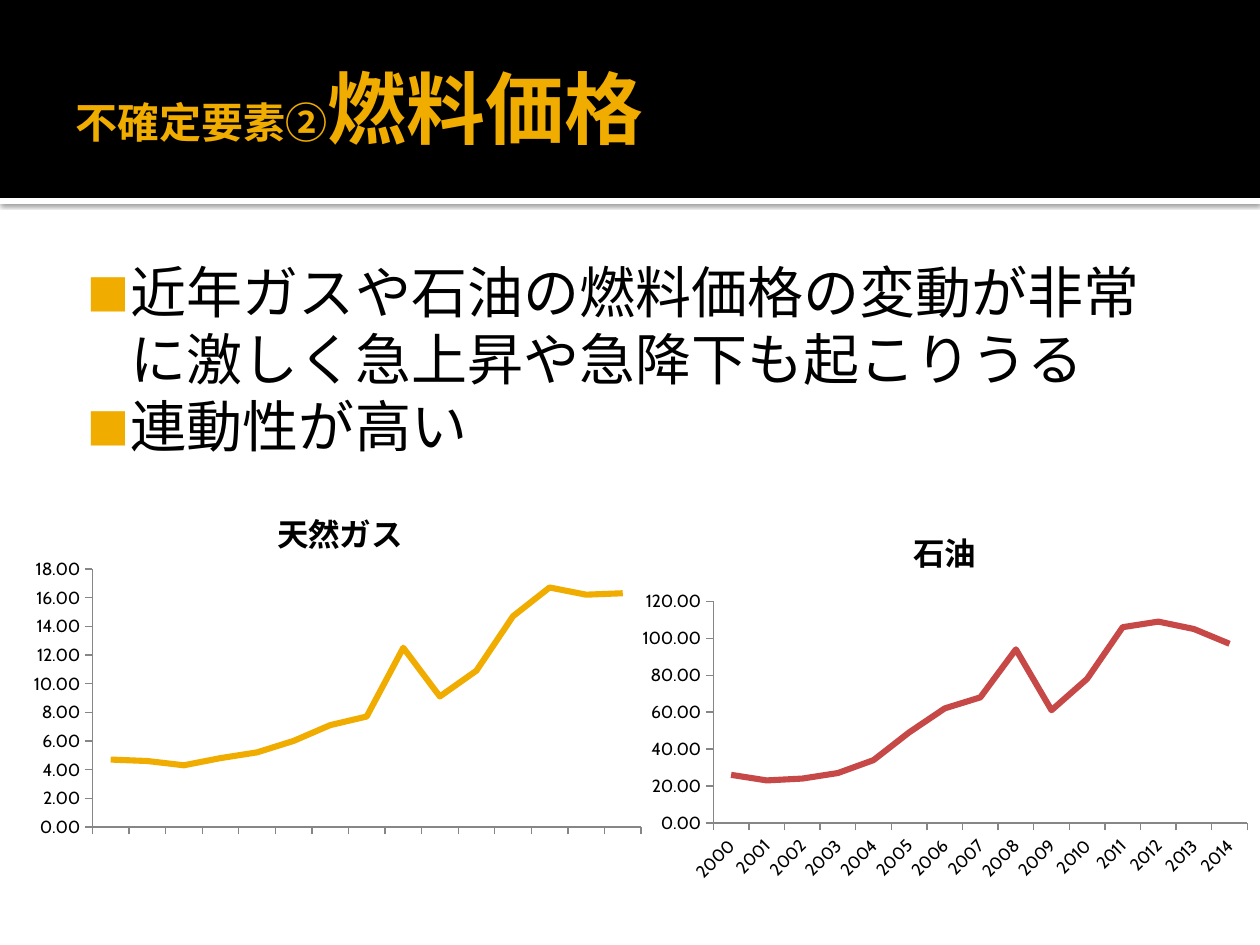
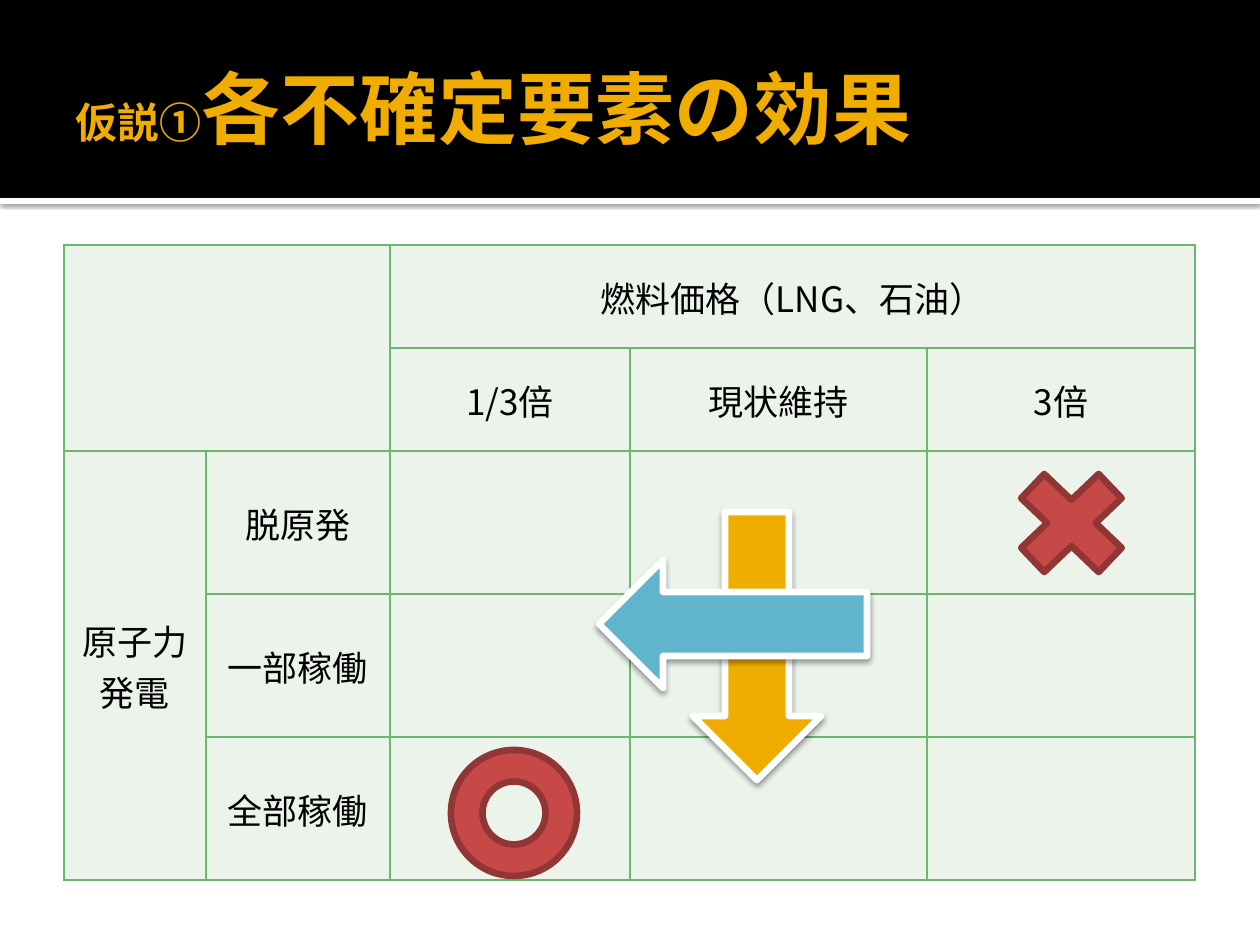
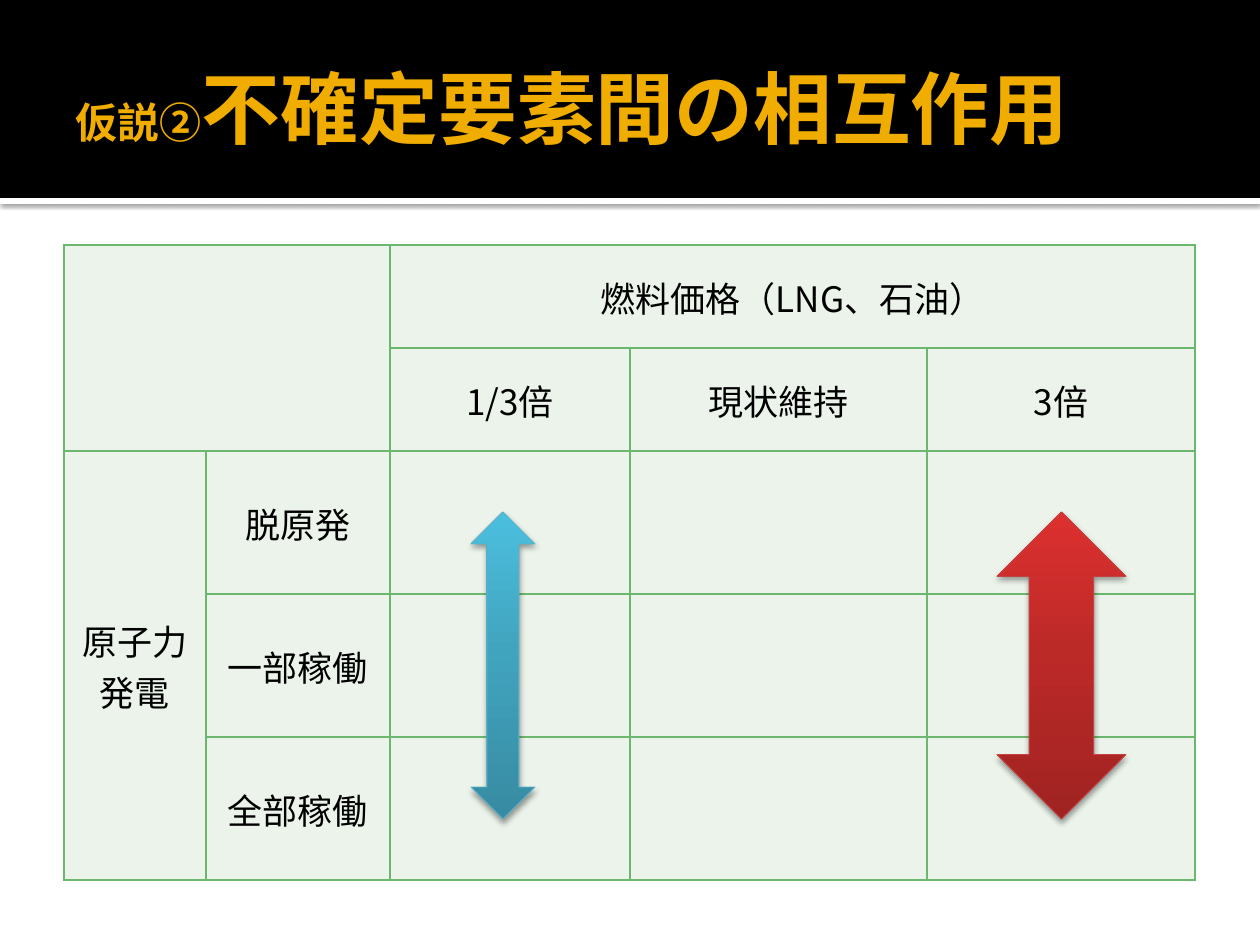
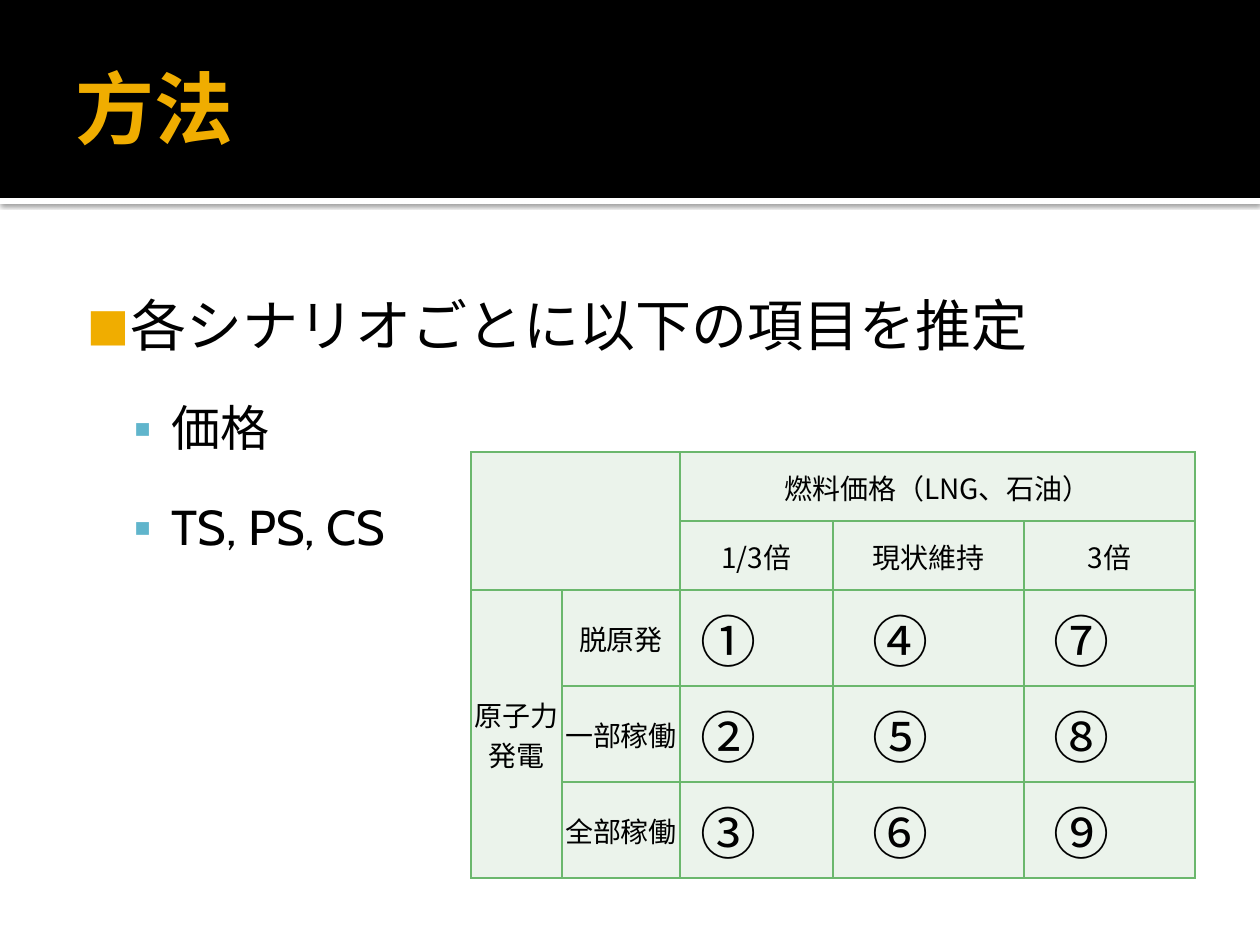
import pptx
import pptx.chart.data
import pptx.dml.color
import pptx.enum.chart
import pptx.enum.shapes
import pptx.enum.text
import pptx.oxml
import pptx.oxml.ns
import pptx.util

MSO = pptx.enum.shapes.MSO_SHAPE
TICK = pptx.enum.chart.XL_TICK_LABEL_POSITION
qn = pptx.oxml.ns.qn
Pt = pptx.util.Pt

SCALE = 914400 / 126
WIDTH, HEIGHT = 1260, 945
FONT, TABLE_FONT = "Cabin", "Noto Sans CJK JP"
COLORS = {
    "white": "FFFFFF", "black": "000000", "gold": "F0AD00", "blue": "60B5CC",
    "red": "C64847", "dark_red": "923535", "green": "6BB76D",
    "pale_green": "EBF3EB", "axis": "868686", "blue_edge": "5BB3CA",
    "red_edge": "C54342",
}
BLUE_GRADIENT = ((0, "378BA2"), (55, "41A4BF"), (100, "4BBFDE"))
RED_GRADIENT = ((0, "A02322"), (55, "BC2A28"), (100, "DC302F"))

TITLE_BOX = (63, 21, 1134, 173)
BODY_BOX = (63, 244, 1134, 638)
BAND = (0, 0, WIDTH, 198)
STRIP = (0, 198, WIDTH, 6)
STRIP_SHADOW = (60, 2.5, 0.8)
ARROW_SHADOW = (38, 3.5, 2)

BULLETS = [
    {"char": "■", "color": "gold", "percent": 80, "left": 60, "hang": 44, "size": 32, "before": 0},
    {"char": "▪", "color": "blue", "percent": 90, "left": 101, "hang": 38, "size": 28, "before": 6},
]

YEARS = [str(year) for year in range(2000, 2015)]
CHARTS = [
    {"name": "天然ガス", "box": (25, 493, 630, 378), "color": "gold",
     "plot": (0.107, 0.201, 0.871, 0.683), "years_shown": False,
     "values": (4.7, 4.6, 4.3, 4.8, 5.2, 6, 7.1, 7.7, 12.5, 9.1, 10.9, 14.7, 16.7, 16.2, 16.3)},
    {"name": "石油", "box": (630, 512, 630, 378), "color": "red",
     "plot": None, "years_shown": True,
     "values": (26, 23, 24, 27, 34, 49, 62, 68, 94, 61, 78, 106, 109, 105, 97)},
]

PRICE_HEAD = "燃料価格（LNG、石油）"
PRICES = ["1/3倍", "現状維持", "3倍"]
NUCLEAR_HEAD = "原子力発電"
NUCLEAR = ["脱原発", "一部稼働", "全部稼働"]
NO_SCENARIOS = [[""] * 3] * 3
SCENARIOS = [["①　", "④　", "⑦　"], ["②　", "⑤　", "⑧　"], ["③　", "⑥　", "⑨　"]]
LARGE_GRID = {"at": (64, 245), "cols": (142, 184, 240, 297, 268),
              "rows": (103, 103, 143, 143, 143), "size": 20}
SMALL_GRID = {"at": (471, 452), "cols": (91, 118, 153, 191, 171),
              "rows": (69, 69, 96, 96, 96), "size": 16}

EFFECT_MARKS = [
    {"kind": MSO.DOWN_ARROW, "box": (693, 512, 128, 268), "fill": "gold",
     "line": ("white", 3.8), "shadow": ARROW_SHADOW},
    {"kind": MSO.DOWN_ARROW, "box": (669, 490, 128, 268), "fill": "blue",
     "line": ("white", 3.8), "shadow": ARROW_SHADOW, "turn": 90},
    {"kind": MSO.DONUT, "box": (451, 750, 126, 126), "fill": "red", "line": ("dark_red", 3.8)},
    {"kind": MSO.MATH_MULTIPLY, "box": (997, 452, 149, 142), "fill": "red", "line": ("dark_red", 3.8)},
]
INTERACTION_MARKS = [
    {"kind": MSO.UP_DOWN_ARROW, "box": (471, 512, 64, 307), "fill": BLUE_GRADIENT,
     "line": ("blue_edge", 0.5), "shadow": ARROW_SHADOW},
    {"kind": MSO.UP_DOWN_ARROW, "box": (997, 512, 129, 307), "fill": RED_GRADIENT,
     "line": ("red_edge", 0.5), "shadow": ARROW_SHADOW},
]

SLIDES = [
    {"lead": "不確定要素②", "title": "燃料価格", "charts": CHARTS, "spacing": None,
     "body": [(0, "近年ガスや石油の燃料価格の変動が非常に激しく急上昇や急降下も起こりうる"),
              (0, "連動性が高い")]},
    {"lead": "仮説①", "title": "各不確定要素の効果", "grid": LARGE_GRID,
     "scenarios": NO_SCENARIOS, "marks": EFFECT_MARKS},
    {"lead": "仮説②", "title": "不確定要素間の相互作用", "grid": LARGE_GRID,
     "scenarios": NO_SCENARIOS, "marks": INTERACTION_MARKS},
    {"lead": "", "title": "方法", "grid": SMALL_GRID, "scenarios": SCENARIOS, "spacing": 1.5,
     "body": [(0, "各シナリオごとに以下の項目を推定"), (1, "価格"), (1, "TS, PS, CS")]},
]


def emu(px):
    return round(px * SCALE)


def place(box):
    return [emu(v) for v in box]


def rgb(name):
    return pptx.dml.color.RGBColor.from_string(COLORS[name])


def xml_in(parent, tag, **attrs):
    child = parent.makeelement(qn(tag), {k: str(v) for k, v in attrs.items()})
    parent.append(child)
    return child


def style(r, size, color="black", font=FONT, bold=False):
    r.font.size = Pt(size)
    r.font.bold = bold
    r.font.name = font
    r.font.color.rgb = rgb(color)
    xml_in(r.font._element, "a:ea", typeface=font)


def set_margins(holder, left, top, right, bottom):
    holder.margin_left, holder.margin_top = emu(left), emu(top)
    holder.margin_right, holder.margin_bottom = emu(right), emu(bottom)


def fill_gradient(sp, stops):
    sp.fill.gradient()
    sp.fill.gradient_angle = 90
    stop_list = next(sp._element.spPr.iter(qn("a:gsLst")))
    for old in list(stop_list):
        stop_list.remove(old)
    for position, color in stops:
        xml_in(xml_in(stop_list, "a:gs", pos=position * 1000), "a:srgbClr", val=color)


def add_shape(s, kind, box, fill, line=None, shadow=None, turn=0):
    sp = s.shapes.add_shape(kind, *place(box))
    sp.rotation = turn
    if isinstance(fill, str):
        sp.fill.solid()
        sp.fill.fore_color.rgb = rgb(fill)
    else:
        fill_gradient(sp, fill)
    if line:
        sp.line.color.rgb = rgb(line[0])
        sp.line.width = Pt(line[1])
    else:
        sp.line.fill.background()
    sp.shadow.inherit = False
    if shadow:
        alpha, blur, distance = shadow
        effects = sp._element.spPr.find(qn("a:effectLst"))
        outer = xml_in(effects, "a:outerShdw", blurRad=int(Pt(blur)), dist=int(Pt(distance)),
                       dir=5400000, algn="ctr", rotWithShape=0)
        xml_in(xml_in(outer, "a:srgbClr", val=COLORS["black"]), "a:alpha", val=alpha * 1000)


def add_text_frame(s, box, margins):
    tf = s.shapes.add_textbox(*place(box)).text_frame
    tf.word_wrap = True
    set_margins(tf, *margins)
    return tf


def add_header(s, lead, title):
    add_shape(s, MSO.RECTANGLE, STRIP, "white", shadow=STRIP_SHADOW)
    add_shape(s, MSO.RECTANGLE, BAND, "black")
    tf = add_text_frame(s, TITLE_BOX, (13, 6, 6, 6))
    tf.vertical_anchor = pptx.enum.text.MSO_ANCHOR.MIDDLE
    for text, size in ((lead, 24), (title, 45)):
        if text:
            r = tf.paragraphs[0].add_run()
            r.text = text
            style(r, size, "gold", bold=True)


def add_body(s, items, spacing):
    tf = add_text_frame(s, BODY_BOX, (8, 13, 13, 6))
    tf.text = "\n".join(text for level, text in items)
    for p, (level, text) in zip(tf.paragraphs, items):
        bullet = BULLETS[level]
        p.level = level
        p.space_before = Pt(bullet["before"])
        if spacing:
            p.line_spacing = spacing
        style(p.runs[0], bullet["size"])
        pPr = p._p.get_or_add_pPr()
        pPr.set("marL", str(emu(bullet["left"])))
        pPr.set("indent", str(-emu(bullet["hang"])))
        xml_in(xml_in(pPr, "a:buClr"), "a:srgbClr", val=COLORS[bullet["color"]])
        xml_in(pPr, "a:buSzPct", val=bullet["percent"] * 1000)
        xml_in(pPr, "a:buFont", typeface=FONT)
        xml_in(pPr, "a:buChar", char=bullet["char"])


def set_plot_area(chart, bounds):
    plot_area = chart.plots[0]._element.getparent()
    for old in plot_area.findall(qn("c:layout")):
        plot_area.remove(old)
    layout = plot_area.makeelement(qn("c:layout"), {})
    plot_area.insert(0, layout)
    manual = xml_in(layout, "c:manualLayout")
    xml_in(manual, "c:layoutTarget", val="inner")
    for tag in ("c:xMode", "c:yMode"):
        xml_in(manual, tag, val="edge")
    for tag, value in zip(("c:x", "c:y", "c:w", "c:h"), bounds):
        xml_in(manual, tag, val=value)


def add_line_chart(s, name, box, color, plot, years_shown, values):
    data = pptx.chart.data.CategoryChartData(number_format="0.00")
    data.categories = YEARS
    data.add_series(name, values)
    kind = pptx.enum.chart.XL_CHART_TYPE.LINE
    chart = s.shapes.add_chart(kind, *place(box), data).chart
    chart.font.size = Pt(10)
    chart.font.name = FONT
    chart.font.color.rgb = rgb("black")
    chart.has_legend = False
    chart.has_title = True
    tf = chart.chart_title.text_frame
    tf.text = name
    style(tf.paragraphs[0].runs[0], 18, bold=True)
    chart.plots[0].vary_by_categories = False
    series = chart.plots[0].series[0]
    series.smooth = False
    series.format.line.color.rgb = rgb(color)
    series.format.line.width = Pt(3.5)
    for axis in (chart.category_axis, chart.value_axis):
        axis.has_major_gridlines = False
        axis.major_tick_mark = pptx.enum.chart.XL_TICK_MARK.OUTSIDE
        axis.format.line.color.rgb = rgb("axis")
        axis.format.line.width = Pt(0.75)
    chart.value_axis.tick_labels.number_format = "0.00"
    chart.value_axis.tick_labels.number_format_is_linked = False
    if years_shown:
        chart.category_axis.tick_labels.font.size = Pt(10)
        body = next(chart.category_axis._element.iter(qn("a:bodyPr")))
        body.set("rot", "-2700000")
    else:
        chart.category_axis.tick_label_position = TICK.NONE
    if plot:
        set_plot_area(chart, plot)


def set_borders(tcPr):
    for i, side in enumerate(("a:lnL", "a:lnR", "a:lnT", "a:lnB")):
        ln = xml_in(tcPr, side, w=int(Pt(1)))
        xml_in(xml_in(ln, "a:solidFill"), "a:srgbClr", val=COLORS["green"])
        tcPr.insert(i, ln)


def fill_cell(cell, text, size):
    cell.fill.solid()
    cell.fill.fore_color.rgb = rgb("pale_green")
    set_margins(cell, 1, 1, 1, 0)
    cell.vertical_anchor = pptx.enum.text.MSO_ANCHOR.MIDDLE
    set_borders(cell._tc.get_or_add_tcPr())
    if text:
        cell.text_frame.text = text
        p = cell.text_frame.paragraphs[0]
        p.alignment = pptx.enum.text.PP_ALIGN.CENTER
        style(p.runs[0], size, font=TABLE_FONT)


def add_scenario_table(s, grid, scenarios):
    cols, rows, size = grid["cols"], grid["rows"], grid["size"]
    texts = [["", "", PRICE_HEAD, "", ""], ["", ""] + PRICES]
    texts += [["", label] + marks for label, marks in zip(NUCLEAR, scenarios)]
    texts[2][0] = NUCLEAR_HEAD
    box = (*grid["at"], sum(cols), sum(rows))
    table = s.shapes.add_table(len(rows), len(cols), *place(box)).table
    table.first_row = table.horz_banding = False
    for column, width in zip(table.columns, cols):
        column.width = emu(width)
    for row, height in zip(table.rows, rows):
        row.height = emu(height)
    for i, row in enumerate(texts):
        for j, text in enumerate(row):
            is_scenario = i > 1 and j > 1
            fill_cell(table.cell(i, j), text, 32 if is_scenario else size)
    for first, last in (((0, 0), (1, 1)), ((0, 2), (0, 4)), ((2, 0), (4, 0))):
        table.cell(*first).merge(table.cell(*last))
    table.cell(2, 0)._tc.get_or_add_tcPr().set("vert", "eaVert")


def main():
    prs = pptx.Presentation()
    prs.slide_width, prs.slide_height = emu(WIDTH), emu(HEIGHT)
    for content in SLIDES:
        s = prs.slides.add_slide(prs.slide_layouts[6])
        add_header(s, content["lead"], content["title"])
        if "body" in content:
            add_body(s, content["body"], content["spacing"])
        for chart in content.get("charts", []):
            add_line_chart(s, **chart)
        if "grid" in content:
            add_scenario_table(s, content["grid"], content["scenarios"])
        for mark in content.get("marks", []):
            add_shape(s, **mark)
    prs.save("out.pptx")


if __name__ == "__main__":
    main()
